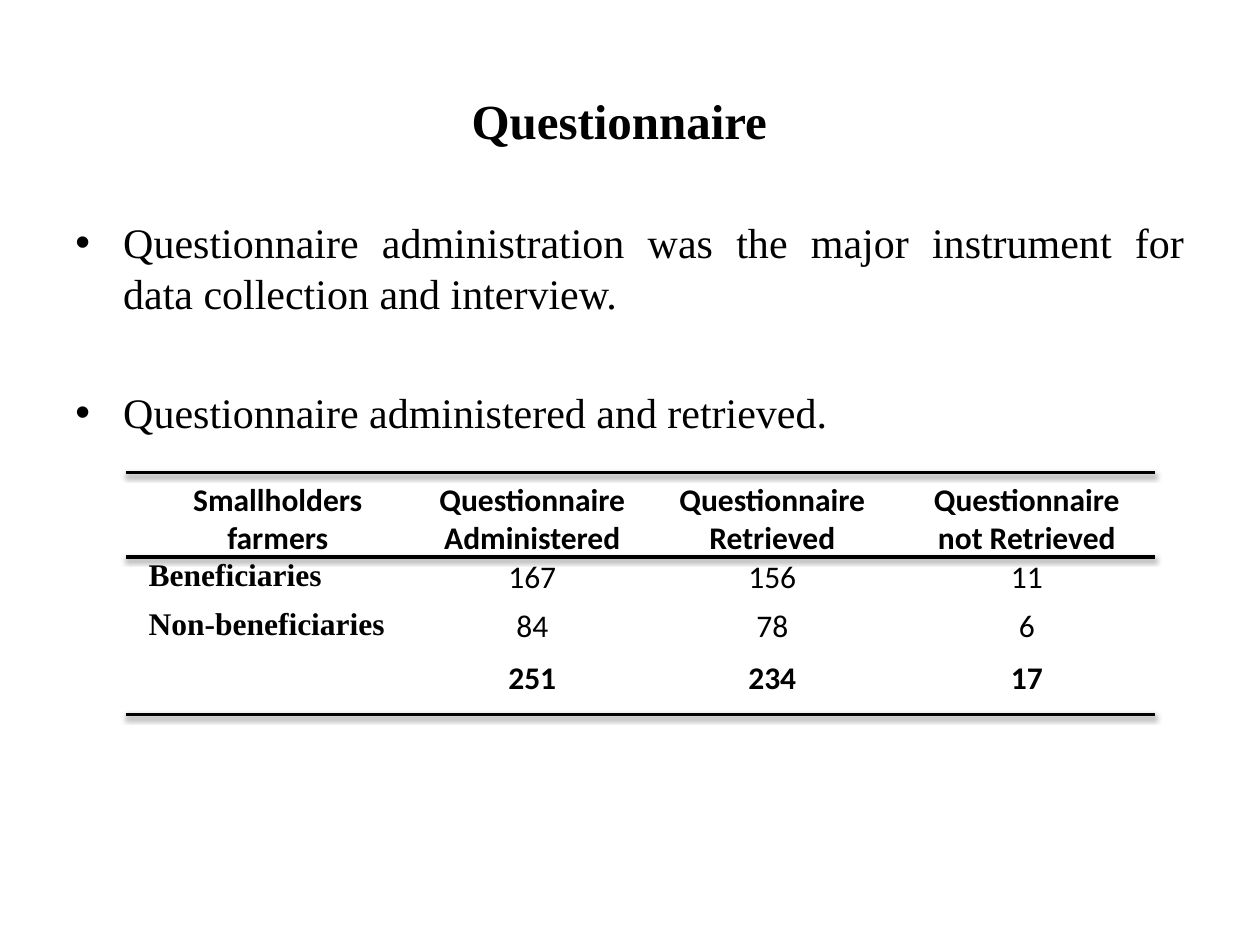
"""Builds the questionnaire slide: title, two bullets and a ruled table."""
from lxml import etree
from pptx import Presentation
from pptx import util as u
from pptx.dml.color import RGBColor
from pptx.enum import shapes, text
from pptx.oxml import parse_xml
from pptx.oxml.ns import nsdecls, qn

TITLE = "Questionnaire"
BULLETS = [
    ("Questionnaire administration was the major instrument for data collection and interview.", 0),
    ("Questionnaire administered and retrieved.", 39.5),
]
SERIF, SANS, BLACK = "Times New Roman", "Calibri", "000000"
COLUMNS = [2.25, 1.79, 2.02, 2.02]
ROWS = [0.81, 0.41, 0.41]
HEADINGS = ["Smallholders farmers", "Questionnaire Administered",
            "Questionnaire Retrieved", "Questionnaire not Retrieved"]
BENEFICIARIES = ["Beneficiaries", "167", "156", "11"]
NON_BENEFICIARIES = ["Non-beneficiaries", "84", "78", "6"]
TOTALS = ["", "251", "234", "17"]
RULES = [3.75, 4.42, 5.67]
RULE_LEFT, RULE_RIGHT = 1, 9.17
ALIGN = text.PP_ALIGN


def colour(value):
    return RGBColor.from_string(value)


def write(paragraph, words, size, font, bold, align):
    paragraph.alignment = align
    run = paragraph.add_run()
    run.text = words
    run.font.size = u.Pt(size)
    run.font.name = font
    run.font.bold = bold
    run.font.color.rgb = colour(BLACK)


def add_frame(slide, left, top, width, height):
    frame = slide.shapes.add_textbox(*map(u.Inches, (left, top, width, height))).text_frame
    frame.word_wrap = True
    return frame


def add_title(slide):
    frame = add_frame(slide, 1.25, 0.58, 7.33, 0.75)
    frame.vertical_anchor = text.MSO_ANCHOR.MIDDLE
    write(frame.paragraphs[0], TITLE, 28, SERIF, True, ALIGN.CENTER)


def add_bullets(slide):
    frame = add_frame(slide, 0.5, 1.17, 9, 5)
    frame.margin_top = u.Inches(0.55)
    for index, (words, gap) in enumerate(BULLETS):
        paragraph = frame.add_paragraph() if index else frame.paragraphs[0]
        paragraph.space_before = u.Pt(gap)
        write(paragraph, words, 24, SERIF, False, ALIGN.JUSTIFY)
        properties = paragraph._p.get_or_add_pPr()
        properties.set("marL", str(u.Inches(0.38)))
        properties.set("indent", str(u.Inches(-0.38)))
        etree.SubElement(properties, qn("a:buFont")).set("typeface", "Arial")
        etree.SubElement(properties, qn("a:buChar")).set("char", "•")


def add_counts(slide):
    counts = slide.shapes.add_table(
        len(ROWS), len(COLUMNS), u.Inches(1.08), u.Inches(3.77),
        u.Inches(sum(COLUMNS)), u.Inches(sum(ROWS))).table
    counts.first_row = counts.horz_banding = False
    for column, width in zip(counts.columns, COLUMNS):
        column.width = u.Inches(width)
    for row, height in zip(counts.rows, ROWS):
        row.height = u.Inches(height)
    groups = [[HEADINGS, BENEFICIARIES], [NON_BENEFICIARIES], [TOTALS]]
    for r, lines in enumerate(groups):
        for c in range(len(COLUMNS)):
            cell = counts.cell(r, c)
            cell.fill.background()
            for index, line in enumerate(lines):
                if not line[c]:
                    continue
                frame = cell.text_frame
                paragraph = frame.add_paragraph() if index else frame.paragraphs[0]
                label = c == 0 and line is not HEADINGS
                bold = label or line is HEADINGS or line is TOTALS
                write(paragraph, line[c], 18, SERIF if label else SANS, bold,
                      ALIGN.JUSTIFY if label else ALIGN.CENTER)


def add_rule(slide, y):
    rule = slide.shapes.add_connector(
        shapes.MSO_CONNECTOR.STRAIGHT, u.Inches(RULE_LEFT), u.Inches(y),
        u.Inches(RULE_RIGHT), u.Inches(y))
    rule.line.color.rgb = colour(BLACK)
    rule.line.width = u.Pt(2)
    rule._element.spPr.append(parse_xml(
        f'<a:effectLst {nsdecls("a")}><a:outerShdw blurRad="{u.Pt(3.1)}" '
        f'dist="{u.Pt(1.6)}" dir="5400000" rotWithShape="0"><a:srgbClr val="{BLACK}">'
        '<a:alpha val="38000"/></a:srgbClr></a:outerShdw></a:effectLst>'))


def main():
    deck = Presentation()
    deck.slide_width, deck.slide_height = u.Inches(10), u.Inches(7.5)
    slide = deck.slides.add_slide(deck.slide_layouts[6])
    add_title(slide)
    add_bullets(slide)
    add_counts(slide)
    for y in RULES:
        add_rule(slide, y)
    deck.save("out.pptx")


if __name__ == "__main__":
    main()
